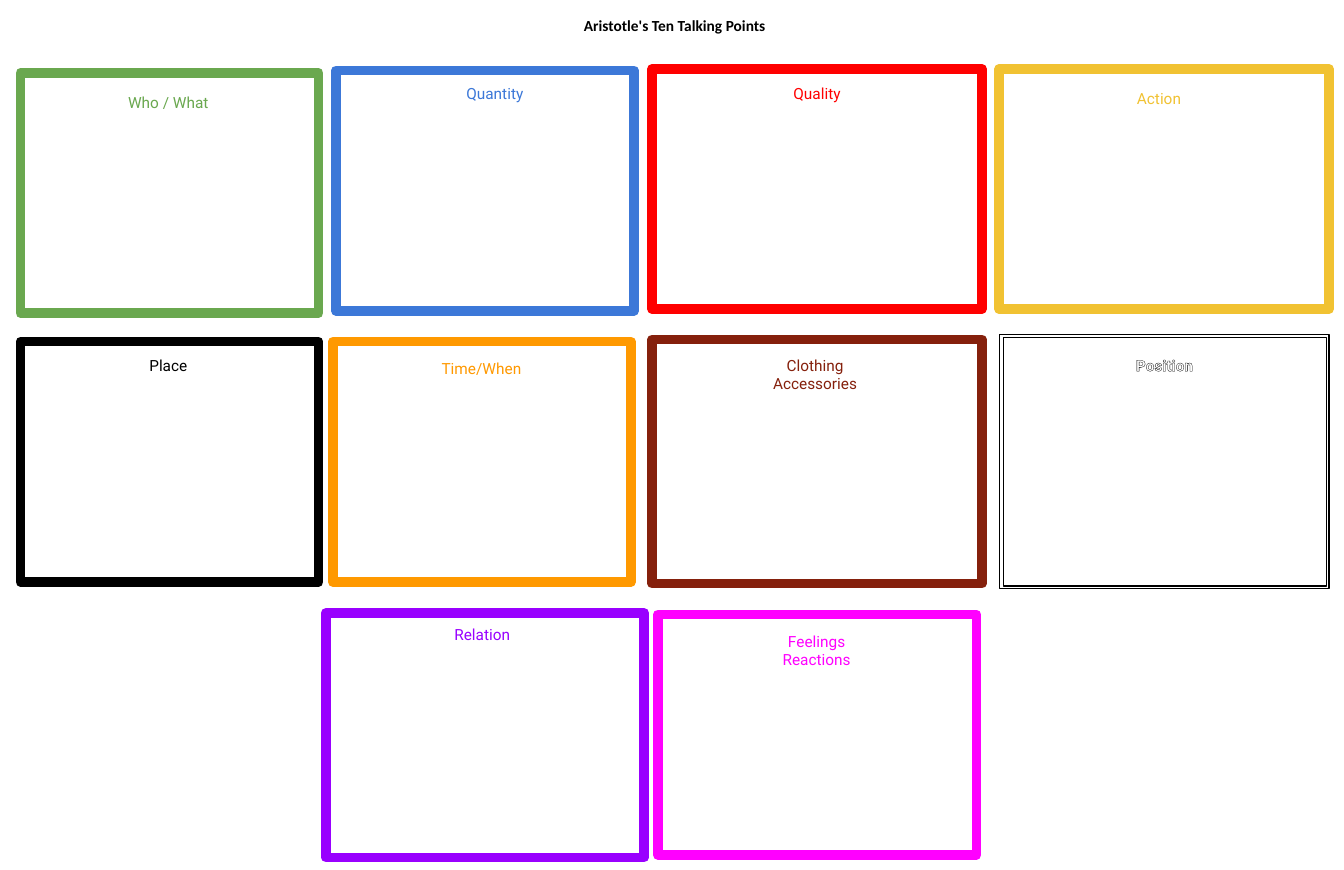
from lxml import etree
from pptx import Presentation
from pptx.dml.color import RGBColor
from pptx.enum.shapes import MSO_SHAPE
from pptx.enum.text import MSO_ANCHOR, MSO_AUTO_SIZE, PP_ALIGN
from pptx.oxml.ns import qn
from pptx.util import Inches, Pt

RECT = MSO_SHAPE.RECTANGLE
TOP = MSO_ANCHOR.TOP
FIXED = MSO_AUTO_SIZE.NONE
CENTER = PP_ALIGN.CENTER

BLACK = RGBColor(0x00, 0x00, 0x00)
WHITE = RGBColor(0xFF, 0xFF, 0xFF)
GREEN = RGBColor(0x6A, 0xA8, 0x4F)
BLUE = RGBColor(0x3C, 0x78, 0xD8)
RED = RGBColor(0xFF, 0x00, 0x00)
GOLD = RGBColor(0xF1, 0xC2, 0x32)
ORANGE = RGBColor(0xFF, 0x99, 0x00)
BROWN = RGBColor(0x85, 0x20, 0x0C)
PURPLE = RGBColor(0x99, 0x00, 0xFF)
PINK = RGBColor(0xFF, 0x00, 0xFF)

THICK, THIN, HEAVY = 8.77, 1.1, 3.29

TITLE = "Aristotle's Ten Talking Points"
TITLE_BOX = (3.21, 0.15, 10.65, 0.6)

PANELS = [
    ("Who / What", GREEN, (0.26, 0.92, 3.77, 3.04), (0.65, 1.13, 2.96, 0.39)),
    ("Quantity", BLUE, (4.25, 0.89, 3.77, 3.04), (5.06, 1.02, 2.4, 0.51)),
    ("Quality", RED, (8.25, 0.87, 4.17, 3.04), (9.28, 1.01, 2.11, 0.53)),
    ("Action", GOLD, (12.64, 0.87, 4.17, 3.04), (13.69, 1.08, 1.94, 0.39)),
    ("Place", BLACK, (0.26, 4.32, 3.77, 3.04), (1.4, 4.45, 1.46, 0.39)),
    ("Time/When", ORANGE, (4.21, 4.32, 3.77, 3.04), (4.52, 4.49, 3.14, 0.39)),
    ("Clothing\nAccessories", BROWN, (8.25, 4.29, 4.17, 3.09), (8.82, 4.45, 2.98, 0.82)),
    ("Relation", PURPLE, (4.12, 7.75, 4.03, 3.09), (4.9, 7.85, 2.4, 0.39)),
    ("Feelings\nReactions", PINK, (8.32, 7.77, 4.03, 3.04), (9.06, 7.94, 2.54, 0.9)),
]

DOUBLE = [(12.64, 4.23, 4.17, 3.21), (12.69, 4.27, 4.09, 3.14)]
POSITION_BOX = (13.53, 4.45, 2.4, 0.39)


def inches(box):
    """Turn a box into slide lengths."""
    return [Inches(n) for n in box]


def outline(run, color, width):
    """Draw a line around the letters of a run."""
    line = etree.Element(qn("a:ln"), w=str(Pt(width)))
    fill = etree.SubElement(line, qn("a:solidFill"))
    etree.SubElement(fill, qn("a:srgbClr"), val=str(color))
    run._r.get_or_add_rPr().insert(0, line)


def write(shape, text, color, face="Roboto", bold=False, edge=None, width=THIN):
    """Fill a shape with centred, outlined text."""
    frame = shape.text_frame
    frame.word_wrap = True
    frame.auto_size = FIXED
    frame.vertical_anchor = TOP
    para = frame.paragraphs[0]
    para.text = text
    para.alignment = CENTER
    font = para.font
    font.name, font.size, font.bold = face, Pt(14), bold
    font.color.rgb = color
    for run in para.runs:
        outline(run, edge or color, width)


def border(slide, box, color, width):
    """Add an empty rectangle with a rounded line joint."""
    shape = slide.shapes.add_shape(RECT, *inches(box))
    shape.shadow.inherit = False
    shape.fill.background()
    shape.line.color.rgb = color
    shape.line.width = Pt(width)
    etree.SubElement(shape.line._ln, qn("a:round"))


def main():
    """Build the slide."""
    deck = Presentation()
    deck.slide_width, deck.slide_height = Inches(17), Inches(11)
    slide = deck.slides.add_slide(deck.slide_layouts[5])

    title = slide.shapes.title
    title.left, title.top, title.width, title.height = inches(TITLE_BOX)
    write(title, TITLE, BLACK, "Calibri", True)

    for name, color, box, label in PANELS:
        border(slide, box, color, THICK)
        write(slide.shapes.add_textbox(*inches(label)), name, color)

    for box in DOUBLE:
        border(slide, box, BLACK, THIN)
    label = slide.shapes.add_textbox(*inches(POSITION_BOX))
    write(label, "Position", WHITE, bold=True, edge=BLACK, width=HEAVY)

    deck.save("out.pptx")


if __name__ == "__main__":
    main()
